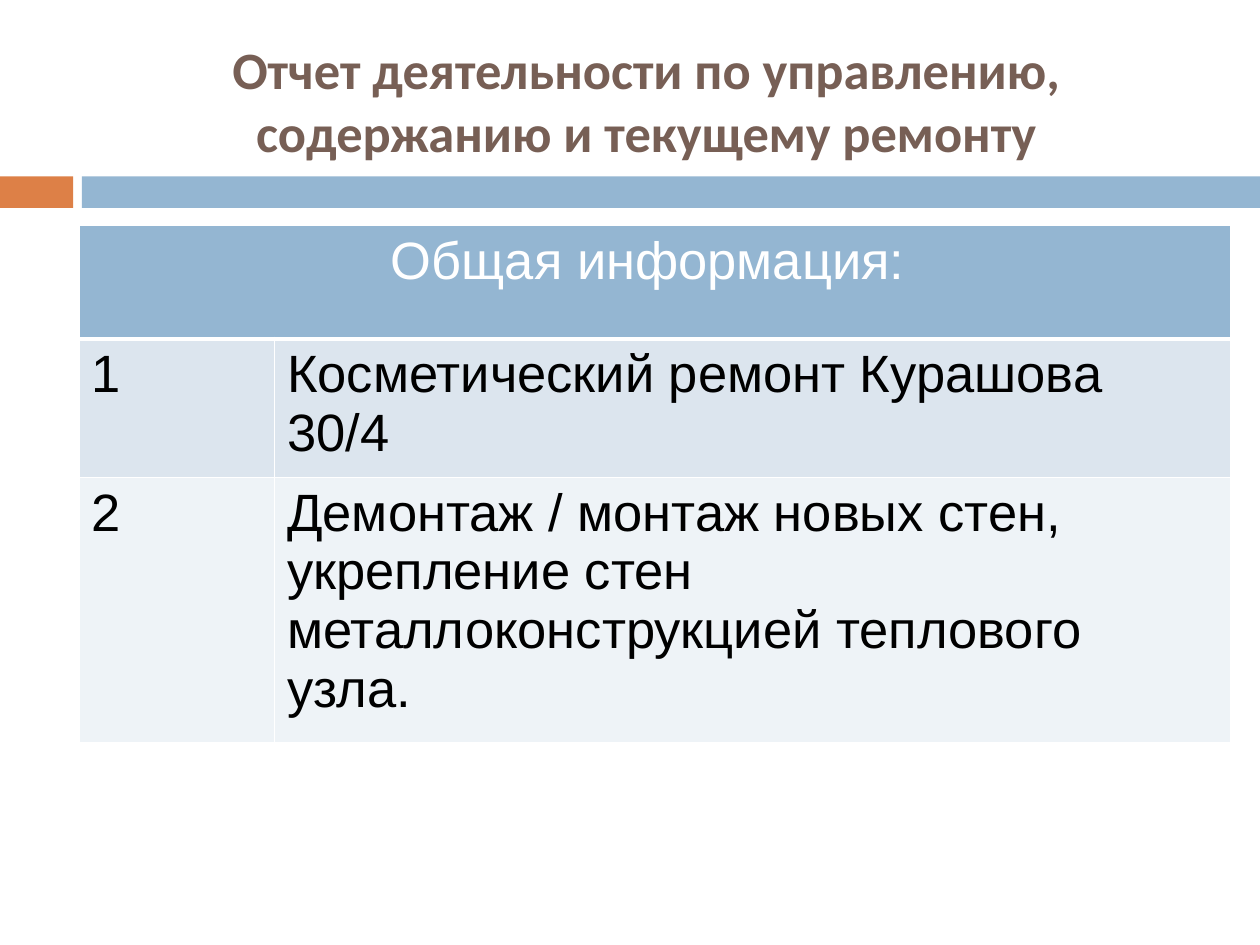
from lxml import etree
from pptx import Presentation
from pptx.dml.color import RGBColor
from pptx.enum.shapes import MSO_SHAPE
from pptx.enum.text import MSO_ANCHOR, PP_ALIGN
from pptx.oxml.ns import qn
from pptx.util import Inches, Pt

RECT = MSO_SHAPE.RECTANGLE
MIDDLE = MSO_ANCHOR.MIDDLE
LEFT, CENTER = PP_ALIGN.LEFT, PP_ALIGN.CENTER

COLORS = {
    "accent": "DD8047",
    "blue": "94B6D2",
    "title": "775F55",
    "dark": "DCE5EE",
    "light": "EEF3F7",
    "white": "FFFFFF",
    "black": "000000",
}
ROWS = [
    ("1", "Косметический ремонт Курашова 30/4"),
    ("2", "Демонтаж / монтаж новых стен, укрепление стен "
          "металлоконструкцией теплового узла."),
]


class Deck:
    def __init__(self, wide, high):
        self.show = Presentation()
        self.show.slide_width = Inches(wide)
        self.show.slide_height = Inches(high)
        self.slide = self.show.slides.add_slide(self.show.slide_layouts[6])

    def color(self, name):
        return RGBColor.from_string(COLORS[name])

    def paint(self, item, name):
        item.fill.solid()
        item.fill.fore_color.rgb = self.color(name)

    def bar(self, box, name):
        shape = self.slide.shapes.add_shape(RECT, *map(Inches, box))
        shape.shadow.inherit = False
        self.paint(shape, name)
        shape.line.fill.background()

    def label(self, frame, text, color, align=LEFT, **style):
        frame.word_wrap = True
        para = frame.paragraphs[0]
        para.alignment = align
        run = para.add_run()
        run.text = text
        look = {"name": "Arial", "size": Pt(30), "bold": False, **style}
        for key, value in look.items():
            setattr(run.font, key, value)
        run.font.color.rgb = self.color(color)

    def title(self, box, text):
        frame = self.slide.shapes.add_textbox(*map(Inches, box)).text_frame
        frame.vertical_anchor = MIDDLE
        self.label(frame, text, "title", CENTER, name="Calibri", bold=True)

    def edge(self, cell, base):
        props = cell._tc.get_or_add_tcPr()
        for spot, side in enumerate("LRTB"):
            width = base if side == "B" else 1
            line = etree.Element(qn(f"a:ln{side}"), w=str(Pt(width)))
            fill = etree.SubElement(line, qn("a:solidFill"))
            etree.SubElement(fill, qn("a:srgbClr"), val=COLORS["white"])
            props.insert(spot, line)

    def cell(self, cell, text, fill, color="black", align=LEFT, base=1):
        self.paint(cell, fill)
        self.edge(cell, base)
        self.label(cell.text_frame, text, color, align)

    def table(self, box, cols, highs, head, rows):
        grid = self.slide.shapes.add_table(
            len(highs), len(cols), *map(Inches, box)).table
        grid.first_row = grid.horz_banding = False
        for col, width in zip(grid.columns, cols):
            col.width = Inches(width)
        for row, high in zip(grid.rows, highs):
            row.height = Inches(high)
        top = grid.cell(0, 0)
        top.merge(grid.cell(0, len(cols) - 1))
        self.cell(top, head, "blue", "white", CENTER, 3)
        for r, texts in enumerate(rows, 1):
            for c, text in enumerate(texts):
                self.cell(grid.cell(r, c), text, "dark" if r % 2 else "light")


def main():
    deck = Deck(10, 7.5)
    deck.bar((0, 1.4, 0.58, 0.25), "accent")
    deck.bar((0.65, 1.4, 9.35, 0.25), "blue")
    deck.title((0.67, 0.25, 8.92, 1.08),
               "Отчет деятельности по управлению, "
               "содержанию и текущему ремонту")
    deck.table((0.63, 1.79, 9.14, 2.66), (1.55, 7.59), (0.9, 0.88, 0.88),
               "Общая информация: ", ROWS)
    deck.show.save("out.pptx")


if __name__ == "__main__":
    main()
